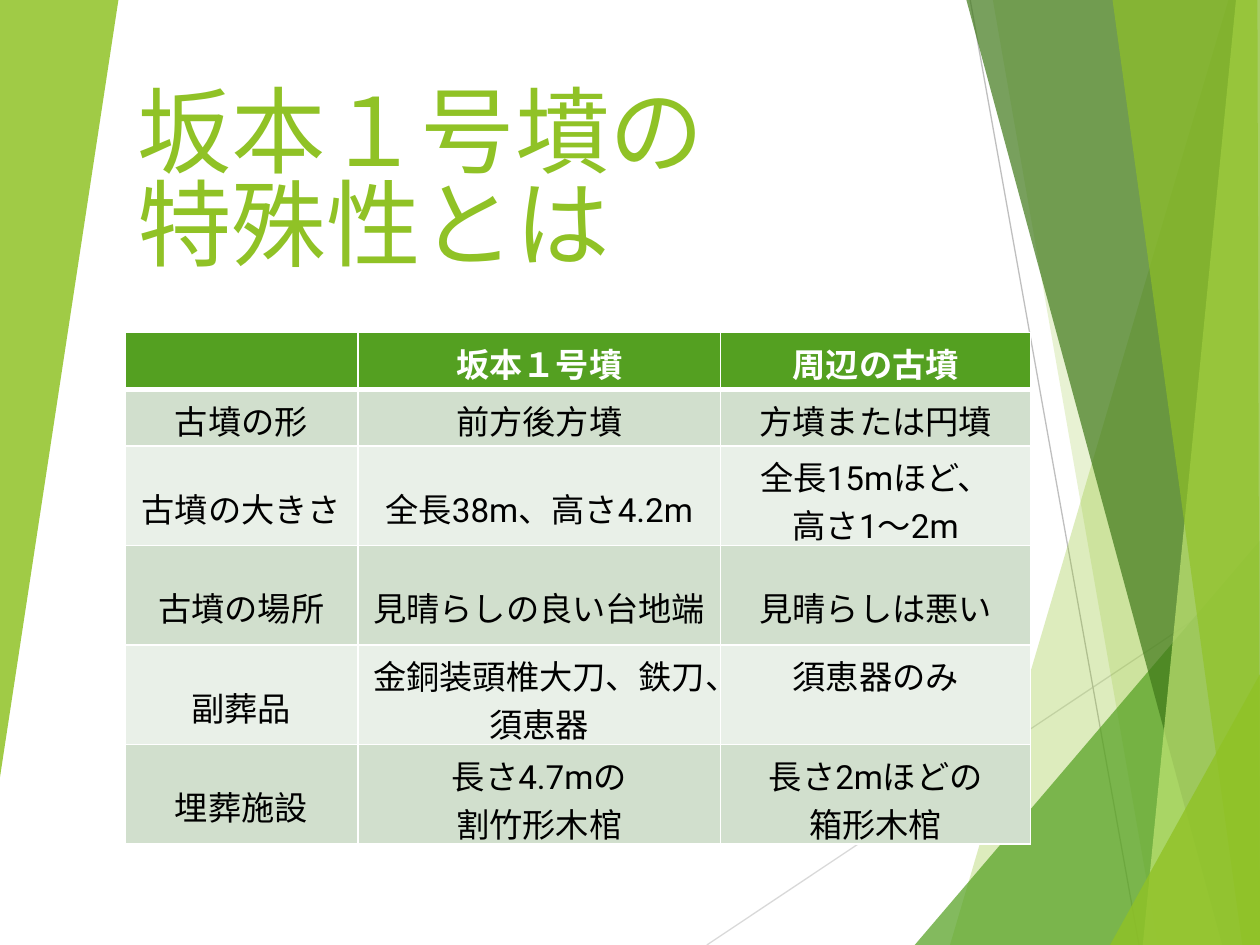
from typing import NamedTuple

from lxml.etree import SubElement
from pptx import Presentation
from pptx.dml.color import RGBColor
from pptx.enum.shapes import MSO_CONNECTOR
from pptx.enum.text import MSO_ANCHOR, PP_ALIGN
from pptx.oxml.ns import qn
from pptx.util import Inches, Pt

LIME, GREEN, WHITE, BLACK = "90C226", "54A021", "FFFFFF", "000000"
BANDS = ("D1DFCD", "E9F0E8")
HEAD = {"size": Pt(19), "bold": True, "name": "Roboto"}
BODY = {**HEAD, "bold": False}
TITLE = {**BODY, "size": Pt(54)}


class Ray(NamedTuple):
    start: tuple
    end: tuple
    color: str


class Facet(NamedTuple):
    points: list
    color: str
    alpha: int


class Entry(NamedTuple):
    lines: list
    space: float = 1.0
    anchor: MSO_ANCHOR = MSO_ANCHOR.MIDDLE


RAYS = [
    Ray((5.61, 7.5), (10, 4.57), "D9D9D9"),
    Ray((7.7, 0), (9.04, 7.5), "BFBFBF"),
]
FACETS = [
    Facet([(9.75, 0), (7.54, 7.5), (10, 7.5), (10, 0)], LIME, 30),
    Facet([(7.88, 0), (9.19, 7.5), (10, 7.5), (10, 0)], LIME, 20),
    Facet([(7.26, 7.5), (10, 4.29), (10, 7.5)], GREEN, 72),
    Facet([(7.67, 0), (9.7, 7.5), (10, 7.5), (10, 0)], "3F7819", 70),
    Facet([(9.81, 0), (9.07, 7.5), (10, 7.5), (10, 0)], "C0E474", 70),
    Facet([(8.83, 0), (9.86, 7.5), (10, 7.5), (9.98, 0)], LIME, 65),
    Facet([(8.81, 7.5), (10, 5.35), (10, 7.5)], LIME, 80),
    Facet([(0, 0), (0.94, 0), (0, 6.17)], LIME, 85),
]
COLS = [1.85, 2.88, 2.46]
ROWS = [0.45, 0.45] + [0.79] * 4
CELLS = [
    [Entry([]), Entry(["坂本１号墳"]), Entry(["周辺の古墳"])],
    [Entry(["古墳の形"]), Entry(["前方後方墳"]), Entry(["方墳または円墳"])],
    [Entry(["古墳の大きさ"], 1.5), Entry(["全長38m、高さ4.2m"], 1.5),
     Entry(["全長15mほど、", "高さ1～2m"])],
    [Entry(["古墳の場所"], 1.5), Entry(["見晴らしの良い台地端"], 1.5),
     Entry(["見晴らしは悪い"], 1.5)],
    [Entry(["副葬品"], 1.5), Entry(["金銅装頭椎大刀、鉄刀、須恵器"]),
     Entry(["須恵器のみ"], anchor=MSO_ANCHOR.TOP)],
    [Entry(["埋葬施設"], 1.5), Entry(["長さ4.7mの", "割竹形木棺"]),
     Entry(["長さ2mほどの", "箱形木棺"])],
]


def paint(part, color: str) -> None:
    """Give a font or line its colour, or a fill a solid one."""
    if hasattr(part, "solid"):
        part.solid()
        part = part.fore_color
    elif hasattr(part, "color"):
        part = part.color
    part.rgb = RGBColor.from_string(color)


def style(font, form: dict, color: str) -> None:
    for key, value in form.items():
        setattr(font, key, value)
    paint(font, color)


def draw_ray(slide, ray: Ray) -> None:
    ends = [Inches(n) for n in ray.start + ray.end]
    line = slide.shapes.add_connector(MSO_CONNECTOR.STRAIGHT, *ends)
    line.line.width = Pt(0.75)
    paint(line.line, ray.color)
    SubElement(line._element.spPr, qn("a:effectLst"))


def draw_facet(slide, facet: Facet) -> None:
    first, *rest = [(Inches(x), Inches(y)) for x, y in facet.points]
    pen = slide.shapes.build_freeform(*first)
    pen.add_line_segments(rest, close=True)
    shape = pen.convert_to_shape()
    shape.shadow.inherit = False
    shape.line.fill.background()
    paint(shape.fill, facet.color)
    tint = shape._element.spPr.find(qn("a:solidFill"))[0]
    SubElement(tint, qn("a:alpha"), val=str(facet.alpha * 1000))


def draw_title(slide, lines: list) -> None:
    box = slide.shapes.add_textbox(
        Inches(0.99), Inches(0.3), Inches(6.37), Inches(1.91))
    frame = box.text_frame
    frame.word_wrap = True
    frame.vertical_anchor = MSO_ANCHOR.BOTTOM
    frame.margin_bottom = 0
    para = frame.paragraphs[0]
    para.line_spacing = 0.82
    for i, text in enumerate(lines):
        if i:
            para.add_line_break()
        run = para.add_run()
        run.text = text
        style(run.font, TITLE, LIME)


def edge(cell, widths: dict) -> None:
    """Draw white cell borders; widths are in points by side."""
    props = cell._tc.get_or_add_tcPr()
    for i, (side, width) in enumerate(widths.items()):
        line = props.makeelement(qn(f"a:ln{side}"), w=str(Pt(width)))
        fill = SubElement(line, qn("a:solidFill"))
        SubElement(fill, qn("a:srgbClr"), val=WHITE)
        props.insert(i, line)


def fill_cell(cell, entry: Entry, row: int) -> None:
    head = row == 0
    paint(cell.fill, GREEN if head else BANDS[(row - 1) % 2])
    edge(cell, {"L": 1, "R": 1, "T": 3 if row == 1 else 1,
                "B": 3 if head else 1})
    cell.vertical_anchor = entry.anchor
    cell.margin_left = cell.margin_right = Inches(0.09)
    frame = cell.text_frame
    for i, text in enumerate(entry.lines):
        para = frame.add_paragraph() if i else frame.paragraphs[0]
        para.alignment = PP_ALIGN.CENTER
        para.line_spacing = entry.space
        run = para.add_run()
        run.text = text
        style(run.font, HEAD if head else BODY, WHITE if head else BLACK)


def draw_table(slide) -> None:
    table = slide.shapes.add_table(
        len(ROWS), len(COLS), Inches(0.99), Inches(2.64),
        Inches(sum(COLS)), Inches(sum(ROWS))).table
    for col, width in zip(table.columns, COLS):
        col.width = Inches(width)
    for r, (row, height) in enumerate(zip(table.rows, ROWS)):
        row.height = Inches(height)
        for cell, entry in zip(row.cells, CELLS[r]):
            fill_cell(cell, entry, r)


def main() -> None:
    deck = Presentation()
    deck.slide_width, deck.slide_height = Inches(10), Inches(7.5)
    slide = deck.slides.add_slide(deck.slide_layouts[6])
    # Backdrop
    for ray in RAYS:
        draw_ray(slide, ray)
    for facet in FACETS:
        draw_facet(slide, facet)
    # Title and comparison table
    draw_title(slide, ["坂本１号墳の", "特殊性とは"])
    draw_table(slide)
    deck.save("out.pptx")


if __name__ == "__main__":
    main()
